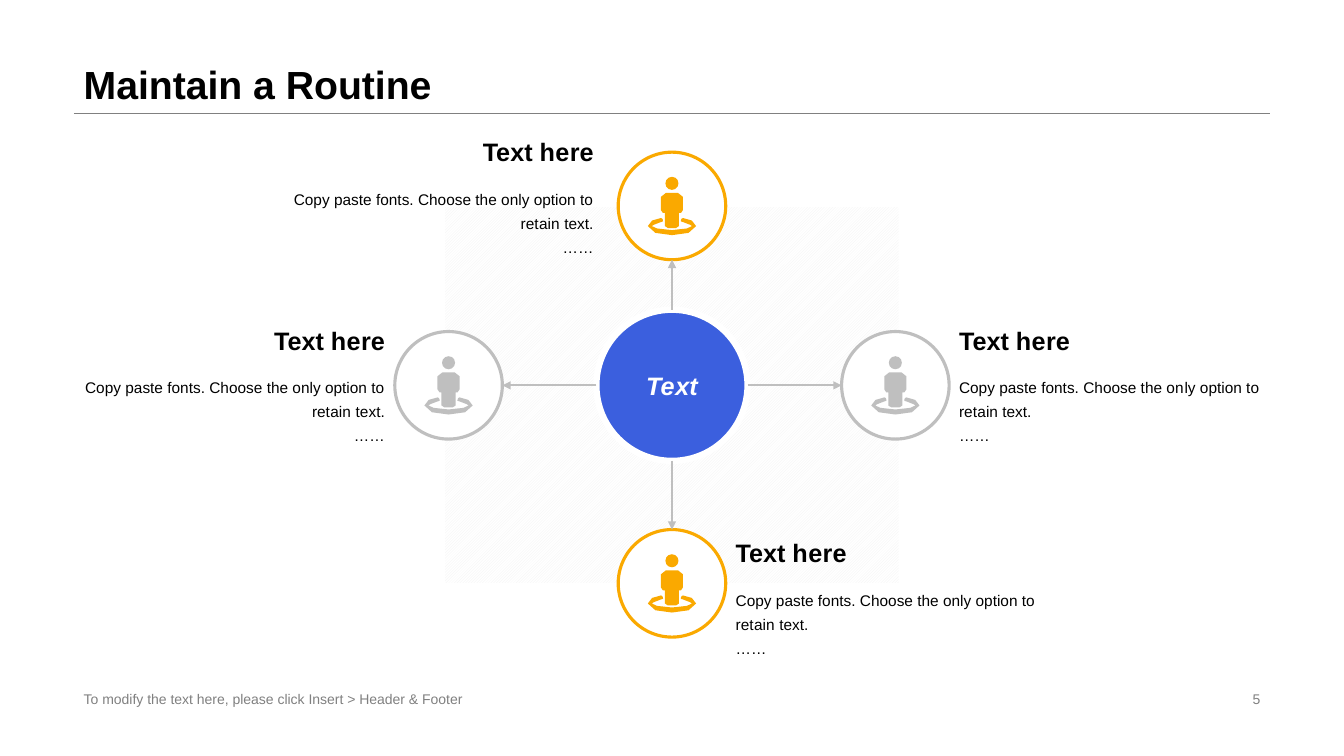
from lxml.etree import SubElement
from pptx import Presentation
from pptx.dml.color import RGBColor
from pptx.enum.dml import MSO_PATTERN
from pptx.enum.shapes import MSO_CONNECTOR, MSO_SHAPE
from pptx.enum.text import MSO_ANCHOR, PP_ALIGN
from pptx.oxml.ns import qn
from pptx.util import Cm, Pt

BLACK, WHITE, GREY, SILVER = "000000", "FFFFFF", "808080", "BFBFBF"
ORANGE, BLUE = "FAA900", "3B5FDE"
HUB_SIZE, NODE_SIZE = 3.81, 2.71
TEXT_WIDTH, HEADING_HEIGHT, BODY_HEIGHT = 8.08, 1.4, 2.57

HEADING = {"size": Pt(18), "bold": True}
BODY = {"size": Pt(11)}
SMALL = {"size": Pt(10)}

HUB_TEXT = ("Te", "  ", "xt")
HEADING_TEXT = ("Text h", " ", "e", " ", "re")
BODY_TEXT = ("Copy paste fonts. Choose the only option to ret", " ", "ain ", " ", "text.")
RIGHT_BODY_TEXT = ("Copy paste fonts. Choose the on", " ", "ly option to ret", " ", "ain text.")

# curve steps, right half of each outline
ICON_HALVES = [
    (2, [(0, 29), (12, 29, 24, 26, 24, 20), (24, 15, 17, 13, 11, 12),
         (10, 12, 9, 13, 9, 14), (8, 15, 9, 16, 11, 16),
         (18, 18, 20, 20, 20, 20), (20, 21, 13, 24, 0, 24)]),
    (1, [(0, 22), (4, 22), (6, 22, 7, 21, 7, 20), (7, 7), (9, 7),
         (10, 7, 11, 6, 11, 4), (11, -9), (11, -10, 9, -12, 6, -13), (0, -13)]),
    (3, [(0, -29), (3.6, -29, 6.5, -26.1, 6.5, -22.5), (6.5, -18.9, 3.6, -16, 0, -16)]),
]

# direction, distance from hub, colour, text side, text gap, text rise, body text
NODES = [
    ((-1, 0), 5.63, SILVER, -1, 0, 1.84, BODY_TEXT),
    ((1, 0), 5.63, SILVER, 1, 0, 1.84, RIGHT_BODY_TEXT),
    ((0, -1), 4.52, ORANGE, -1, 0.37, 2.07, BODY_TEXT),
    ((0, 1), 4.99, ORANGE, 1, 0, 1.47, BODY_TEXT),
]


def colour(value):
    return RGBColor.from_string(value)


def apply_format(target, values):
    for name, value in values.items():
        setattr(target, name, value)


def write(shape, lines, font, ink=BLACK, align=PP_ALIGN.LEFT, anchor=MSO_ANCHOR.MIDDLE, spacing=1.0):
    frame = shape.text_frame
    apply_format(frame, {"word_wrap": True, "vertical_anchor": anchor})
    for index, line in enumerate(lines):
        paragraph = frame.add_paragraph() if index else frame.paragraphs[0]
        apply_format(paragraph, {"alignment": align, "line_spacing": spacing})
        for piece in line:
            run = paragraph.add_run()
            run.text = piece
            apply_format(run.font, {"name": "Arial", **font})
            run.font.color.rgb = colour(ink)
            if not piece.strip():
                run.font.size = Pt(1)


def add_text(slide, box, lines, font, **options):
    write(slide.shapes.add_textbox(*map(Cm, box)), lines, font, **options)


def add_line(slide, start, end, ink, width, arrow=False):
    connector = slide.shapes.add_connector(MSO_CONNECTOR.STRAIGHT, *map(Cm, (*start, *end)))
    connector.line.color.rgb = colour(ink)
    connector.line.width = Pt(width)
    if arrow:
        SubElement(connector.line._get_or_add_ln(), qn("a:tailEnd"), type="triangle")
    SubElement(connector._element.spPr, qn("a:effectLst"))


def add_circle(slide, centre, size, fill, ink, width):
    left, top = (value - size / 2 for value in centre)
    circle = slide.shapes.add_shape(MSO_SHAPE.OVAL, *map(Cm, (left, top, size, size)))
    circle.shadow.inherit = False
    circle.fill.solid()
    circle.fill.fore_color.rgb = colour(fill)
    circle.line.color.rgb = colour(ink)
    circle.line.width = Pt(width)
    return circle


def trace(steps, half):
    points = [half[0]]
    for segment in half[1:]:
        if len(segment) == 2:
            points.append(segment)
            continue
        start = points[-1]
        first, second, end = segment[:2], segment[2:4], segment[4:]
        for step in range(1, steps + 1):
            t = step / steps
            u = 1 - t
            points.append(tuple(
                u**3 * a + 3 * u * u * t * b + 3 * u * t * t * c + t**3 * d
                for a, b, c, d in zip(start, first, second, end)))
    return points + [(-x, y) for x, y in reversed(points) if x]


def add_person(slide, centre, size, fill):
    unit = size / 107
    contours = [
        [(Cm(centre[0] + x * unit), Cm(centre[1] + y * unit)) for x, y in trace(steps, half)]
        for steps, half in ICON_HALVES
    ]
    builder = slide.shapes.build_freeform(*contours[0][0])
    for index, contour in enumerate(contours):
        if index:
            builder.move_to(*contour[0])
        builder.add_line_segments(contour[1:], close=True)
    person = builder.convert_to_shape()
    person.shadow.inherit = False
    person.fill.solid()
    person.fill.fore_color.rgb = colour(fill)
    person.line.fill.background()


def add_frame(slide, box):
    left, top, width, height = box
    rule = top + 2.85
    add_line(slide, (left, rule), (left + width, rule), GREY, 0.25)
    add_text(slide, (left, top, width, 2.85), [("Maintain a Routine",)],
             {"size": Pt(28), "bold": True}, anchor=MSO_ANCHOR.BOTTOM, spacing=0.9)
    footer = top + height - 0.58
    add_text(slide, (left, footer, 11.5, 0.58),
             [("To modify the text here, please click Insert > Header & Footer",)], SMALL, ink=GREY)
    add_text(slide, (left + width - TEXT_WIDTH, footer, TEXT_WIDTH, 0.58), [("5",)], SMALL,
             ink=GREY, align=PP_ALIGN.RIGHT)


def add_backdrop(slide, box):
    backdrop = slide.shapes.add_shape(MSO_SHAPE.TRAPEZOID, *map(Cm, box))
    backdrop.adjustments[0] = 0
    backdrop.shadow.inherit = False
    backdrop.fill.patterned()
    backdrop.fill.pattern = MSO_PATTERN.DARK_UPWARD_DIAGONAL
    backdrop.fill.fore_color.rgb = colour("F2F2F2")
    backdrop.fill.back_color.rgb = colour(WHITE)
    backdrop.line.fill.background()


def add_caption(slide, left, top, body, align):
    add_text(slide, (left, top + HEADING_HEIGHT, TEXT_WIDTH, BODY_HEIGHT), [body, ("……",)],
             BODY, align=align, anchor=MSO_ANCHOR.TOP, spacing=1.3)
    add_text(slide, (left, top, TEXT_WIDTH, HEADING_HEIGHT), [HEADING_TEXT], HEADING, align=align)


def add_diagram(slide, box):
    left, top, width, height = box
    hub = (left + width / 2, top + 4.48)
    add_backdrop(slide, box)
    circle = add_circle(slide, hub, HUB_SIZE, BLUE, WHITE, 4.5)
    write(circle, [HUB_TEXT], {**HEADING, "italic": True}, ink=WHITE, align=PP_ALIGN.CENTER)
    for direction, distance, ink, side, gap, rise, body in NODES:
        def along(length):
            return tuple(origin + step * length for origin, step in zip(hub, direction))

        centre = along(distance)
        add_circle(slide, centre, NODE_SIZE, WHITE, ink, 2.25)
        add_person(slide, centre, NODE_SIZE, ink)
        add_line(slide, along(HUB_SIZE / 2), along(distance - NODE_SIZE / 2), SILVER, 1.5, arrow=True)
        text_left = centre[0] + side * (NODE_SIZE / 2 + gap) - (TEXT_WIDTH if side < 0 else 0)
        add_caption(slide, text_left, centre[1] - rise, body,
                    PP_ALIGN.RIGHT if side < 0 else PP_ALIGN.LEFT)


def main():
    presentation = Presentation()
    presentation.slide_width = Cm(33.87)
    presentation.slide_height = Cm(19.05)
    slide = presentation.slides.add_slide(presentation.slide_layouts[6])
    add_frame(slide, (1.86, 0, 30.15, 17.9))
    add_diagram(slide, (11.22, 5.23, 11.43, 9.45))
    presentation.save("out.pptx")


if __name__ == "__main__":
    main()
